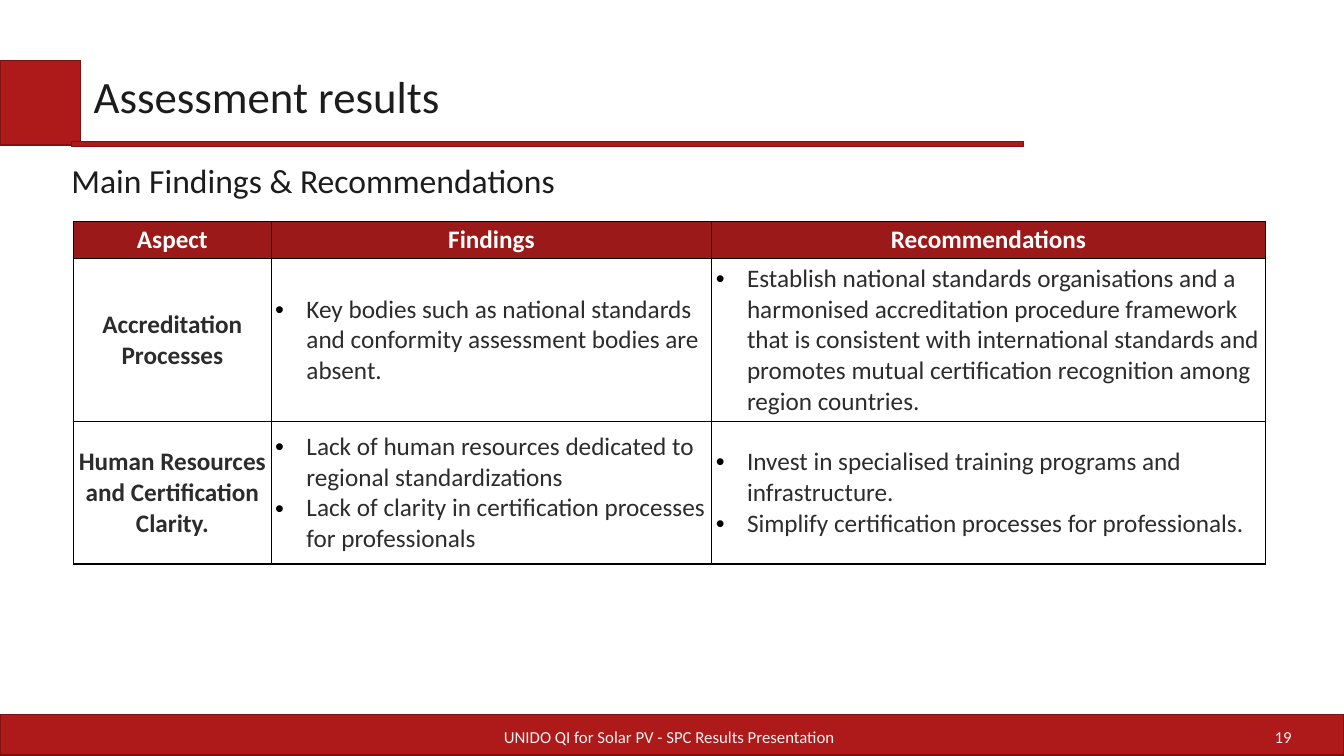
from lxml.etree import SubElement
from pptx import Presentation
from pptx.dml.color import RGBColor
from pptx.enum.shapes import MSO_SHAPE as SHAPE
from pptx.enum.text import MSO_ANCHOR as ANCHOR, PP_ALIGN as ALIGN
from pptx.oxml.ns import qn
from pptx.util import Inches, Pt

HEADINGS = ["Aspect", "Findings", "Recommendations"]
ASSESSMENTS = [
    ("Accreditation Processes",
     ["Key bodies such as national standards and conformity assessment bodies are absent."],
     ["Establish national standards organisations and a harmonised accreditation procedure "
      "framework that is consistent with international standards and promotes mutual "
      "certification recognition among region countries."]),
    ("Human Resources and Certification Clarity.",
     ["Lack of human resources dedicated to regional standardizations",
      "Lack of clarity in certification processes for professionals"],
     ["Invest in specialised training programs and infrastructure.",
      "Simplify certification processes for professionals."]),
]
COLUMN_WIDTHS = [1.96, 4.37, 5.49]
ROW_HEIGHTS = [0.31, 1.62, 1.41]
BANDS = [(0, 7.09, 13.33, 0.4), (0, 0.6, 0.8, 0.84), (0.71, 1.4, 9.44, 0.05)]
HEADING_STYLE = dict(size=32, color="1D1C1C", spacing=0.9)
FOOTER_STYLE = dict(size=12, color="F2F2F2")
LABELS = [
    ("UNIDO QI for Solar PV - SPC Results Presentation", (3.61, 7.11, 6.06, 0.4),
     FOOTER_STYLE | dict(align=ALIGN.CENTER)),
    ("Main Findings & Recommendations", (0.61, 1.35, 8.38, 0.92), HEADING_STYLE | dict(size=24)),
    ("Assessment results", (0.83, 0.61, 8.38, 0.75), HEADING_STYLE),
    ("19", (9.77, 7.11, 3.14, 0.4), FOOTER_STYLE | dict(align=ALIGN.RIGHT)),
]


def rgb(color):
    return RGBColor.from_string(color)


def add_bullet(paragraph):
    properties = paragraph._p.get_or_add_pPr()
    properties.set("marL", str(Inches(0.31)))
    properties.set("indent", str(-Inches(0.31)))
    bullet_color = SubElement(properties, qn("a:buClr"))
    SubElement(bullet_color, qn("a:srgbClr"), val="000000")
    SubElement(properties, qn("a:buFont"), typeface="Arial")
    SubElement(properties, qn("a:buChar"), char="•")


def write(frame, texts, size=18, color="2C2C2C", bold=False, align=ALIGN.LEFT,
          spacing=None, bullet=False):
    for index, text in enumerate(texts):
        paragraph = frame.add_paragraph() if index else frame.paragraphs[0]
        paragraph.alignment = align
        if spacing:
            paragraph.line_spacing = spacing
        if bullet:
            add_bullet(paragraph)
        run = paragraph.add_run()
        run.text = text
        run.font.name = "Calibri"
        run.font.size = Pt(size)
        run.font.bold = bold
        run.font.color.rgb = rgb(color)


def add_band(slide, box):
    band = slide.shapes.add_shape(SHAPE.RECTANGLE, *map(Inches, box))
    band.shadow.inherit = False
    band.fill.solid()
    band.fill.fore_color.rgb = rgb("AE1919")
    band.line.color.rgb = rgb("7E1212")
    band.line.width = Pt(0.85)


def add_label(slide, text, box, style):
    frame = slide.shapes.add_textbox(*map(Inches, box)).text_frame
    frame.word_wrap = True
    frame.vertical_anchor = ANCHOR.MIDDLE
    write(frame, [text], **style)


def format_cell(cell, fill=None):
    cell.vertical_anchor = ANCHOR.MIDDLE
    cell.margin_left = cell.margin_right = Inches(0.04)
    cell.margin_top = cell.margin_bottom = Inches(0.03)
    properties = cell._tc.get_or_add_tcPr()
    for side in ("a:lnL", "a:lnR", "a:lnT", "a:lnB"):
        border = SubElement(properties, qn(side), w=str(Pt(1)))
        paint = SubElement(border, qn("a:solidFill"))
        SubElement(paint, qn("a:srgbClr"), val="000000")
    if fill:
        cell.fill.solid()
        cell.fill.fore_color.rgb = rgb(fill)
    else:
        cell.fill.background()


def add_findings_table(slide):
    frame = slide.shapes.add_table(
        len(ROW_HEIGHTS), len(COLUMN_WIDTHS), Inches(0.73), Inches(2.2),
        Inches(sum(COLUMN_WIDTHS)), Inches(sum(ROW_HEIGHTS)))
    table = frame.table
    table.horz_banding = False
    for column, width in zip(table.columns, COLUMN_WIDTHS):
        column.width = Inches(width)
    for row, height in zip(table.rows, ROW_HEIGHTS):
        row.height = Inches(height)
    for heading, cell in zip(HEADINGS, table.rows[0].cells):
        format_cell(cell, "9B1919")
        write(cell.text_frame, [heading], color="FFFFFF", bold=True, align=ALIGN.CENTER)
    for number, (aspect, *points) in enumerate(ASSESSMENTS, 1):
        aspect_cell, *point_cells = table.rows[number].cells
        format_cell(aspect_cell)
        write(aspect_cell.text_frame, [aspect], bold=True, align=ALIGN.CENTER)
        for cell, items in zip(point_cells, points):
            format_cell(cell)
            write(cell.text_frame, items, bullet=True)


def main():
    deck = Presentation()
    deck.slide_width, deck.slide_height = Inches(13.33), Inches(7.5)
    slide = deck.slides.add_slide(deck.slide_layouts[6])
    for box in BANDS:
        add_band(slide, box)
    add_findings_table(slide)
    for text, box, style in LABELS:
        add_label(slide, text, box, style)
    deck.save("out.pptx")


if __name__ == "__main__":
    main()
